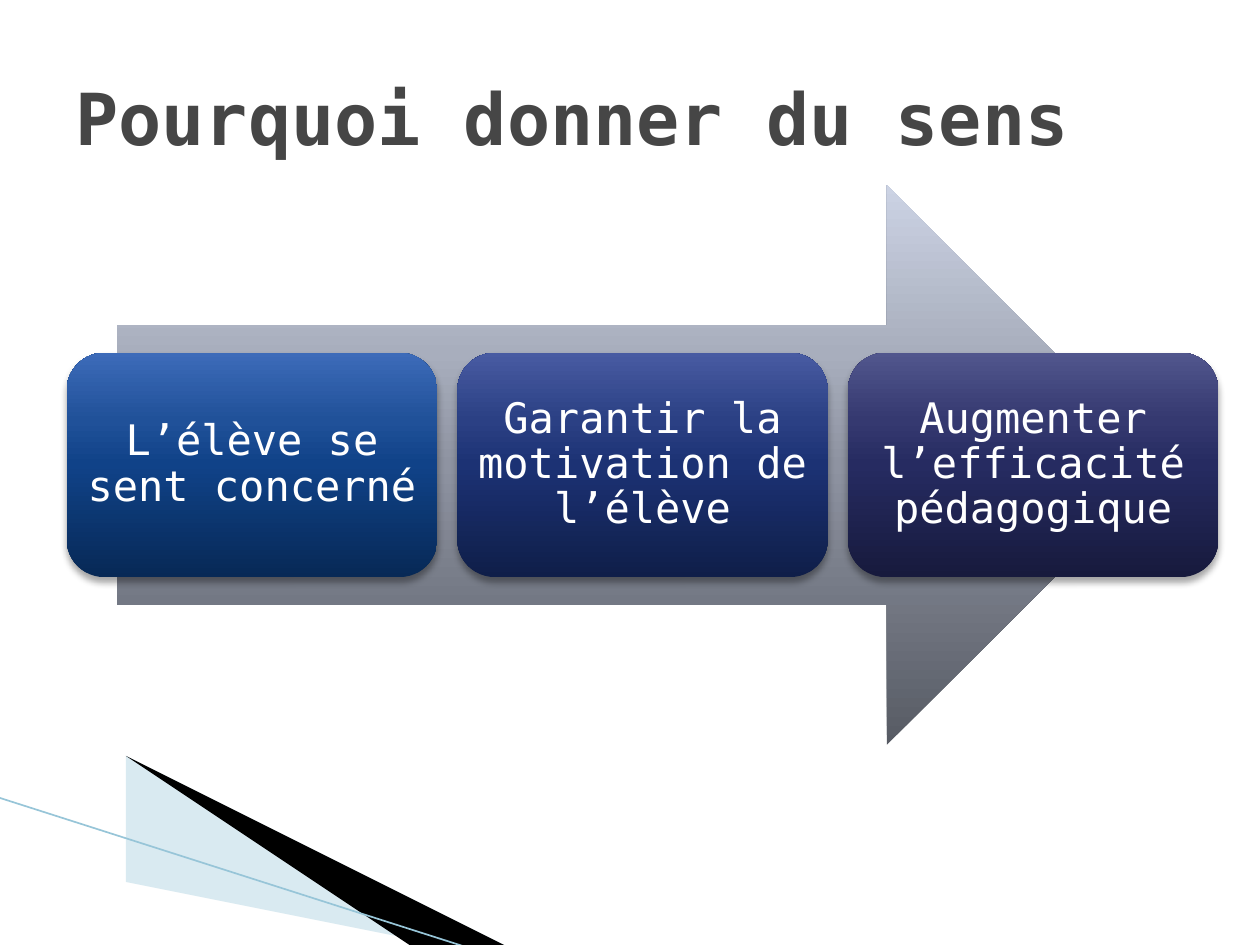
from lxml.etree import SubElement
from pptx import Presentation
from pptx.dml.color import RGBColor
from pptx.enum.shapes import MSO_CONNECTOR, MSO_SHAPE
from pptx.enum.text import MSO_ANCHOR, PP_ALIGN
from pptx.oxml.ns import qn
from pptx.util import Inches, Pt

FONT = "DejaVu Sans Mono"
WHITE = RGBColor(0xFF, 0xFF, 0xFF)
BLACK = RGBColor(0, 0, 0)
GREY = RGBColor(0x46, 0x46, 0x46)
PALE_BLUE = RGBColor(0xA0, 0xCB, 0xDC)
LINE_BLUE = RGBColor(0x97, 0xC5, 0xD8)

TITLE = "Pourquoi donner du sens"
STOPS = (0, 50, 70, 100)  # percent, from bottom to top
ARROW_COLORS = ("575B64", "8E93A1", "A8AEBD", "CCD3E4")
STEPS = [
    ("L’élève se sent concerné", ("072956", "104288", "205199", "3D6BB9")),
    ("Garantir la motivation de l’élève", ("0F1E49", "1C3274", "2B4084", "485BA2")),
    ("Augmenter l’efficacité pédagogique", ("171A3D", "262B61", "353970", "51568D")),
]
STEP_LEFT, STEP_TOP, STEP_WIDTH, STEP_HEIGHT = 0.53, 2.8, 2.94, 1.78
STEP_PITCH = 3.1

# Corner wedges: points, colour, opacity in percent
WEDGES = [
    ([(0.55, 6.51), (5.95, 7.51), (4.56, 7.51), (0.55, 6.5)], PALE_BLUE, 40),
    ([(0.53, 6.49), (4.57, 7.51), (3.72, 7.52), (0.54, 6.5)], BLACK, 100),
]


def add_wedge(slide, points, color, opacity):
    builder = slide.shapes.build_freeform(*points[0], scale=Inches(1))
    builder.add_line_segments(points[1:], close=True)
    wedge = builder.convert_to_shape()
    wedge.shadow.inherit = False
    wedge.line.fill.background()
    wedge.fill.solid()
    wedge.fill.fore_color.rgb = color
    if opacity < 100:
        fill_color = wedge._element.spPr.find(qn("a:solidFill"))[0]
        SubElement(fill_color, qn("a:alpha"), val=str(opacity * 1000))


def add_gradient_shape(slide, kind, left, top, width, height, colors):
    shape = slide.shapes.add_shape(
        kind, Inches(left), Inches(top), Inches(width), Inches(height))
    shape.shadow.inherit = False
    shape.line.fill.background()
    shape.fill.gradient()
    shape.fill.gradient_angle = 90
    stop_list = shape._element.spPr.find(qn("a:gradFill")).find(qn("a:gsLst"))
    stop_list.clear()
    for position, color in zip(STOPS, colors):
        stop = SubElement(stop_list, qn("a:gs"), pos=str(position * 1000))
        SubElement(stop, qn("a:srgbClr"), val=color)
    return shape


def add_soft_shadow(shape):
    effects = shape._element.spPr.find(qn("a:effectLst"))
    shadow = SubElement(effects, qn("a:outerShdw"), blurRad=str(Pt(4)),
                        dist=str(Pt(3)), dir="5400000", rotWithShape="0")
    color = SubElement(shadow, qn("a:srgbClr"), val="000000")
    SubElement(color, qn("a:alpha"), val="35000")


def write_text(shape, text, size, color, bold=False, align=PP_ALIGN.LEFT,
               line_spacing=1.0, side_inset=0.1):
    frame = shape.text_frame
    frame.word_wrap = True
    frame.vertical_anchor = MSO_ANCHOR.MIDDLE
    frame.margin_left = frame.margin_right = Inches(side_inset)
    paragraph = frame.paragraphs[0]
    paragraph.alignment = align
    paragraph.line_spacing = line_spacing
    run = paragraph.add_run()
    run.text = text
    run.font.name = FONT
    run.font.size = Pt(size)
    run.font.bold = bold
    run.font.color.rgb = color


def main():
    presentation = Presentation()
    presentation.slide_width, presentation.slide_height = Inches(10), Inches(7.5)
    slide = presentation.slides.add_slide(presentation.slide_layouts[6])

    for points, color, opacity in WEDGES:
        add_wedge(slide, points, color, opacity)
    edge = slide.shapes.add_connector(
        MSO_CONNECTOR.STRAIGHT, Inches(-0.01), Inches(6.33), Inches(3.71), Inches(7.52))
    edge.line.color.rgb = LINE_BLUE
    edge.line.width = Pt(0.95)
    SubElement(edge._element.spPr, qn("a:effectLst"))

    title = slide.shapes.add_textbox(Inches(0.5), Inches(0.3), Inches(9), Inches(1.25))
    write_text(title, TITLE, 41, GREY, bold=True)

    add_gradient_shape(
        slide, MSO_SHAPE.RIGHT_ARROW, 0.93, 1.47, 8.33, 4.44, ARROW_COLORS)
    for index, (text, colors) in enumerate(STEPS):
        step = add_gradient_shape(
            slide, MSO_SHAPE.ROUNDED_RECTANGLE, STEP_LEFT + index * STEP_PITCH,
            STEP_TOP, STEP_WIDTH, STEP_HEIGHT, colors)
        add_soft_shadow(step)
        write_text(step, text, 24, WHITE, align=PP_ALIGN.CENTER,
                   line_spacing=0.9, side_inset=0.02)

    presentation.save("out.pptx")


if __name__ == "__main__":
    main()
